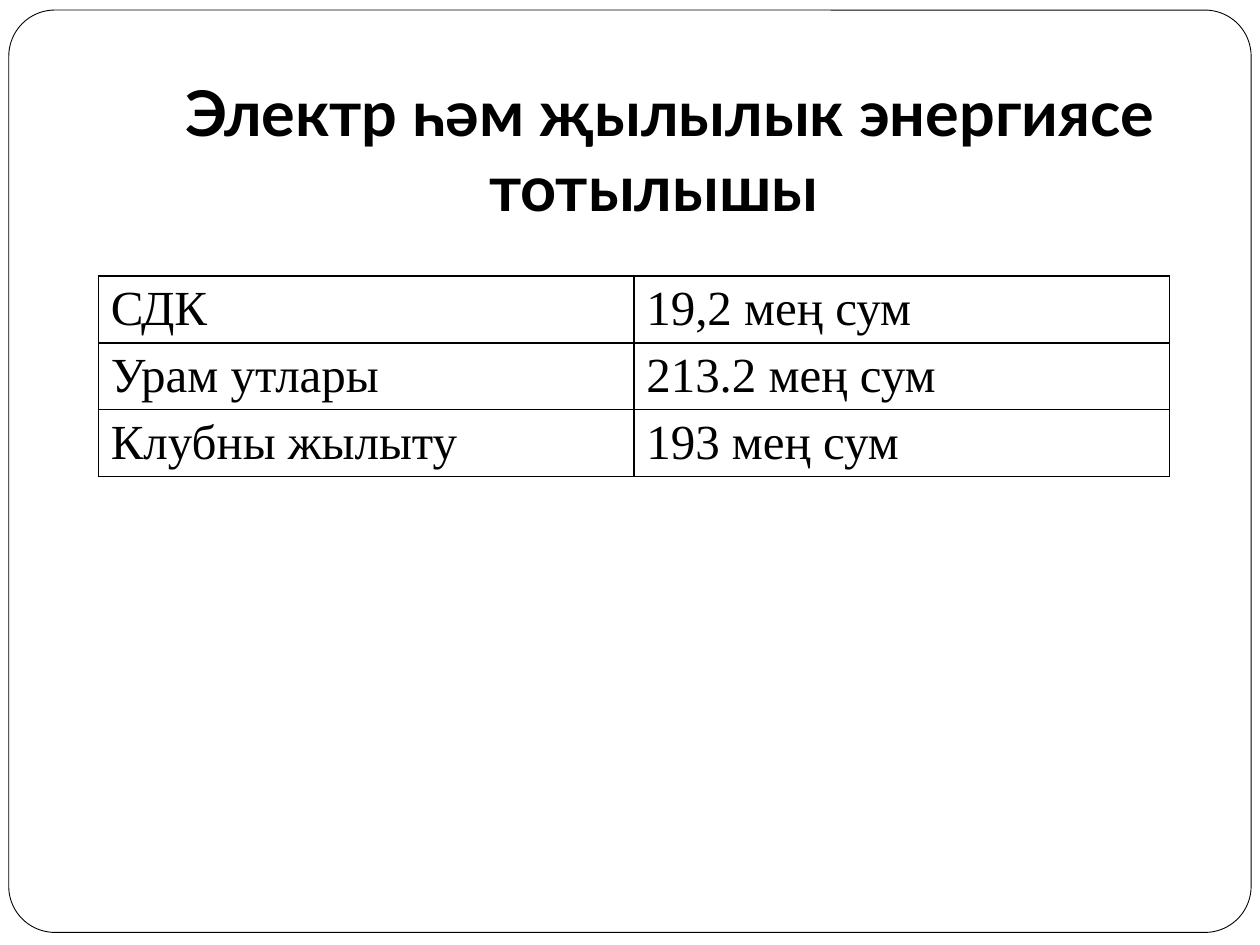
from typing import NamedTuple

from lxml import etree
from pptx import Presentation
from pptx.dml.color import RGBColor
from pptx.enum.shapes import MSO_SHAPE
from pptx.enum.text import MSO_ANCHOR, MSO_AUTO_SIZE, PP_ALIGN
from pptx.oxml.ns import qn
from pptx.util import Inches, Pt

ROUNDED = MSO_SHAPE.ROUNDED_RECTANGLE
BOTTOM = MSO_ANCHOR.BOTTOM
NO_AUTOFIT = MSO_AUTO_SIZE.NONE
CENTER = PP_ALIGN.CENTER

BLACK, WHITE = "000000", "FFFFFF"
TITLE_FONT, TABLE_FONT = "Lato", "Times New Roman"
TITLE_ONLY = 5
COLUMN_WIDTH, ROW_HEIGHT = 4.25, 0.53


class Box(NamedTuple):
    left: float
    top: float
    width: float
    height: float

    def lengths(self):
        return [Inches(value) for value in self]


class Expense(NamedTuple):
    purpose: str
    amount: str


EXPENSES = [
    Expense("СДК", "19,2 мең сум"),
    Expense("Урам утлары", "213.2 мең сум"),
    Expense("Клубны жылыту", "193 мең сум"),
]


def color(hex_code: str) -> RGBColor:
    return RGBColor.from_string(hex_code)


def add_run(paragraph, text: str, font: str, size: float, bold: bool = False) -> None:
    run = paragraph.add_run()
    run.text = text
    run.font.name = font
    run.font.size = Pt(size)
    run.font.bold = bold
    run.font.color.rgb = color(BLACK)


def add_frame(slide, box: Box) -> None:
    frame = slide.shapes.add_shape(ROUNDED, *box.lengths())
    frame.adjustments[0] = 0.05
    frame.shadow.inherit = False
    frame.fill.solid()
    frame.fill.fore_color.rgb = color(WHITE)
    frame.line.color.rgb = color(BLACK)
    frame.line.width = Pt(0.5)
    # The frame lies behind the title placeholder.
    slide.shapes.title._element.addprevious(frame._element)


def format_title(title, box: Box) -> None:
    title.left, title.top, title.width, title.height = box.lengths()
    text = title.text_frame
    text.word_wrap = True
    text.auto_size = NO_AUTOFIT
    text.vertical_anchor = BOTTOM
    text.margin_left = text.margin_right = text.margin_bottom = Inches(0.1)
    text.margin_top = Inches(0.05)
    heading = text.paragraphs[0]
    heading.alignment = CENTER
    add_run(heading, " ", TITLE_FONT, 36)
    add_run(heading, "Электр һәм җылылык энергиясе тотылышы ", TITLE_FONT, 36, True)


def add_borders(cell, hex_code: str, width: float) -> None:
    properties = cell._tc.get_or_add_tcPr()
    for side in ("a:lnL", "a:lnR", "a:lnT", "a:lnB"):
        border = etree.SubElement(properties, qn(side), w=str(Pt(width)))
        fill = etree.SubElement(border, qn("a:solidFill"))
        etree.SubElement(fill, qn("a:srgbClr"), val=hex_code)


def add_expense_table(slide, left: float, top: float, expenses: list[Expense]) -> None:
    rows, columns = len(expenses), len(Expense._fields)
    box = Box(left, top, columns * COLUMN_WIDTH, rows * ROW_HEIGHT)
    table = slide.shapes.add_table(rows, columns, *box.lengths()).table
    table.first_row = table.horz_banding = False
    for row, expense in enumerate(expenses):
        for column, text in enumerate(expense):
            cell = table.cell(row, column)
            add_borders(cell, BLACK, 1)
            cell.fill.background()
            add_run(cell.text_frame.paragraphs[0], text, TABLE_FONT, 28)


def main() -> None:
    deck = Presentation()
    deck.slide_width, deck.slide_height = Inches(10), Inches(7.5)
    slide = deck.slides.add_slide(deck.slide_layouts[TITLE_ONLY])
    add_frame(slide, Box(0.07, 0.08, 9.86, 7.32))
    format_title(slide.shapes.title, Box(1, 0.55, 8.5, 1.33))
    add_expense_table(slide, 0.78, 2.19, EXPENSES)
    deck.save("out.pptx")


if __name__ == "__main__":
    main()
